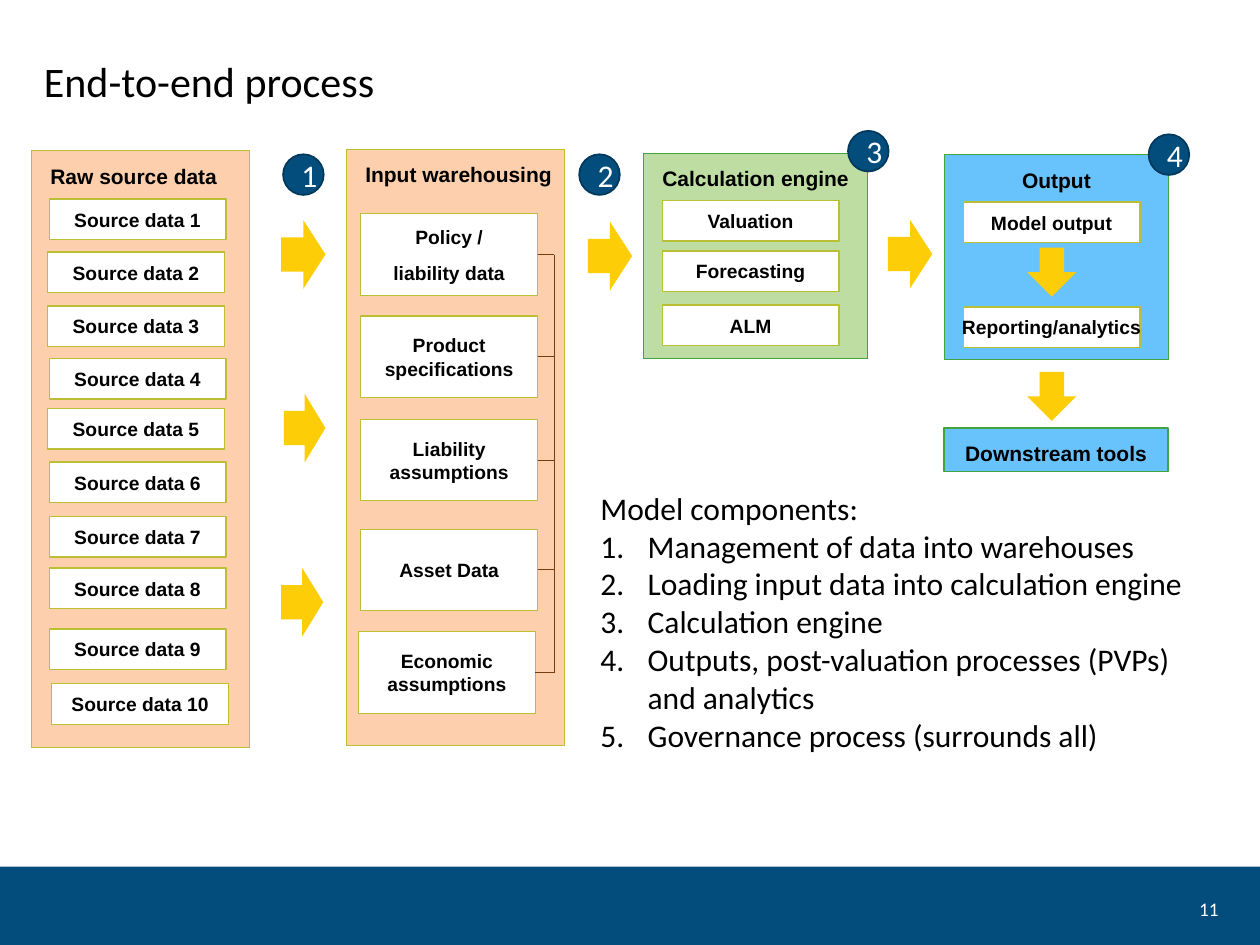
from lxml import etree
from pptx import Presentation
from pptx import util as u
from pptx.dml.color import RGBColor
from pptx.enum import shapes, text
from pptx.oxml import ns

THEME = {
    "navy": "024D7C", "navy_line": "01395C", "peach": "FDCFAC", "green": "BDDDA3",
    "blue": "68C3FD", "white": "FFFFFF", "black": "000000", "olive": "BABF33",
    "leaf": "41A441", "yellow": "FDCE07", "brown": "743F10",
    "title": 24, "body": 18, "panel": 12, "card": 11, "page": 11,
    "sans": "Arial", "main": "Calibri",
}
LEFT, CENTER, RIGHT = text.PP_ALIGN.LEFT, text.PP_ALIGN.CENTER, text.PP_ALIGN.RIGHT
TOP, MIDDLE = text.MSO_ANCHOR.TOP, text.MSO_ANCHOR.MIDDLE
RECTANGLE, OVAL = shapes.MSO_SHAPE.RECTANGLE, shapes.MSO_SHAPE.OVAL
ARROW = shapes.MSO_SHAPE.RIGHT_ARROW

CARD_WIDTH, ROW_HEIGHT, WAREHOUSE_HEIGHT = 101, 23.3, 46.6
BUS_X = 316.8
BADGE_SIZE = 23.2

PANELS = [
    ("Raw source data", (18, 86.2, 124.6, 340.8), "peach", "olive", LEFT, [
        ("Source data 1", 28.1, 113.8), ("Source data 2", 27.2, 144),
        ("Source data 3", 27.2, 174.8), ("Source data 4", 28.1, 204.8),
        ("Source data 5", 27.2, 233.3), ("Source data 6", 28.1, 264),
        ("Source data 7", 28.1, 295), ("Source data 8", 28.1, 324.6),
        ("Source data 9", 28.1, 359.4), ("Source data 10", 29.6, 390.7)]),
    ("Input warehousing", (198, 85.3, 124.6, 340.6), "peach", "olive", LEFT, []),
    ("Calculation engine", (367.7, 87.6, 128, 117.2), "green", "leaf", LEFT, [
        ("Valuation", 378.4, 114.5), ("Forecasting", 378.4, 143.4),
        ("ALM", 378.4, 174.4)]),
    ("Output", (539.7, 88.3, 128, 117.2), "blue", "leaf", CENTER, [
        ("Model output", 550.4, 115.5), ("Reporting/analytics", 550.4, 175.4)]),
    ("Downstream tools", (539.5, 244.6, 128, 24.9), "blue", "leaf", CENTER, []),
]
WAREHOUSES = [
    (["Policy /", "liability data"], 206.2, 122.2),
    (["Product specifications"], 206.2, 180.6),
    (["Liability assumptions"], 206.2, 239.6),
    (["Asset Data"], 206.2, 302.4),
    (["Economic assumptions"], 204.9, 361),
]
ARROWS = [
    (160.7, 125.8, 25.3, 39.2, 0), (162.2, 225, 23.8, 39.2, 0),
    (160.7, 324.5, 24, 39.2, 0), (335.9, 126.7, 25.3, 39.2, 0),
    (507.4, 125.6, 25.3, 39.2, 0),
    (587, 141.5, 28, 28, 90), (587, 212.5, 28, 28, 90),
]
BADGES = [("1", 161.8, 88.2), ("2", 331, 88.2), ("3", 484.6, 74.8), ("4", 656.4, 76.8)]
COMPONENTS_HEADING = "Model components:"
COMPONENTS = [
    "Management of data into warehouses",
    "Loading input data into calculation engine",
    "Calculation engine",
    "Outputs, post-valuation processes (PVPs) and analytics",
    "Governance process (surrounds all)",
]


def color(name):
    return RGBColor.from_string(THEME[name])


def apply(target, values):
    for name, value in values.items():
        setattr(target, name, value)


def write(shape, lines, size, font="main", ink="black", align=LEFT, anchor=TOP,
          insets=(7.2, 3.6), wrap=True, bold=False, gap=0):
    horizontal, vertical = map(u.Pt, insets)
    frame = shape.text_frame
    apply(frame, {"word_wrap": wrap, "vertical_anchor": anchor,
                  "margin_left": horizontal, "margin_right": horizontal,
                  "margin_top": vertical, "margin_bottom": vertical})
    for index, line in enumerate(lines):
        paragraph = frame.add_paragraph() if index else frame.paragraphs[0]
        paragraph.alignment = align
        if index and gap:
            paragraph.space_before = u.Pt(gap)
        run = paragraph.add_run()
        run.text = line
        apply(run.font, {"size": u.Pt(THEME[size]), "name": THEME[font], "bold": bold})
        run.font.color.rgb = color(ink)
    return frame


def draw(parent, kind, box, fill, line=None, line_width=0.75):
    shape = parent.add_shape(kind, *map(u.Pt, box))
    shape.shadow.inherit = False
    shape.fill.solid()
    shape.fill.fore_color.rgb = color(fill)
    if line:
        shape.line.color.rgb = color(line)
        shape.line.width = u.Pt(line_width)
    else:
        shape.line.fill.background()
    return shape


def draw_card(parent, lines, left, top, height, wrap=False):
    card = draw(parent, RECTANGLE, (left, top, CARD_WIDTH, height), "white", "olive")
    write(card, lines, "card", "sans", align=CENTER, anchor=MIDDLE,
          insets=(0, 0), wrap=wrap, bold=True, gap=7.4)
    return card


def draw_line(parent, start, end, card=None):
    line = parent.add_connector(shapes.MSO_CONNECTOR.STRAIGHT, *map(u.Pt, start + end))
    if card:
        line.begin_connect(card, 3)
    line.line.color.rgb = color("brown")
    line.line.width = u.Pt(0.5)
    etree.SubElement(line._element.spPr, ns.qn("a:effectLst"))


def draw_text(parent, box, lines, size, **options):
    return write(parent.add_textbox(*map(u.Pt, box)), lines, size, **options)


def number(paragraph):
    properties = paragraph._p.get_or_add_pPr()
    properties.set("marL", str(u.Pt(27)))
    properties.set("indent", str(-u.Pt(27)))
    etree.SubElement(properties, ns.qn("a:buFont"), typeface="+mj-lt")
    etree.SubElement(properties, ns.qn("a:buAutoNum"), type="arabicPeriod")


def main():
    presentation = Presentation()
    apply(presentation, {"slide_width": u.Pt(720), "slide_height": u.Pt(540)})
    slide = presentation.slides.add_slide(presentation.slide_layouts[6])
    canvas = slide.shapes

    draw(canvas, RECTANGLE, (0, 495.2, 720, 44.8), "navy")
    draw_text(canvas, (665.3, 511.2, 38.2, 15.8), ["11"], "page",
              ink="white", align=RIGHT, anchor=MIDDLE)
    draw_text(canvas, (18, 30.2, 620.6, 36), ["End-to-end process"], "title",
              anchor=MIDDLE).paragraphs[0].line_spacing = 0.9

    for title, box, fill, line, align, cards in PANELS:
        parent = canvas.add_group_shape().shapes if cards else canvas
        panel = draw(parent, RECTANGLE, box, fill, line)
        write(panel, [title], "panel", "sans", align=align,
              insets=(10.8, 7.2), wrap=False, bold=True)
        for label, left, top in cards:
            draw_card(parent, [label], left, top, ROW_HEIGHT)

    middles = []
    for lines, left, top in WAREHOUSES:
        card = draw_card(canvas, lines, left, top, WAREHOUSE_HEIGHT, wrap=len(lines) == 1)
        middle = top + WAREHOUSE_HEIGHT / 2
        draw_line(canvas, (left + CARD_WIDTH, middle), (BUS_X, middle), card)
        middles.append(middle)
    draw_line(canvas, (BUS_X, middles[0]), (BUS_X, middles[-1]))

    for left, top, width, height, rotation in ARROWS:
        draw(canvas, ARROW, (left, top, width, height), "yellow").rotation = rotation

    for label, left, top in BADGES:
        badge = draw(canvas, OVAL, (left, top, BADGE_SIZE, BADGE_SIZE), "navy", "navy_line", 1)
        write(badge, [label], "body", ink="white", align=CENTER, anchor=MIDDLE)

    frame = draw_text(canvas, (336, 275.8, 354.2, 159.8),
                      [COMPONENTS_HEADING] + COMPONENTS, "body")
    frame.auto_size = text.MSO_AUTO_SIZE.SHAPE_TO_FIT_TEXT
    for paragraph in frame.paragraphs[1:]:
        number(paragraph)

    presentation.save("out.pptx")


if __name__ == "__main__":
    main()
